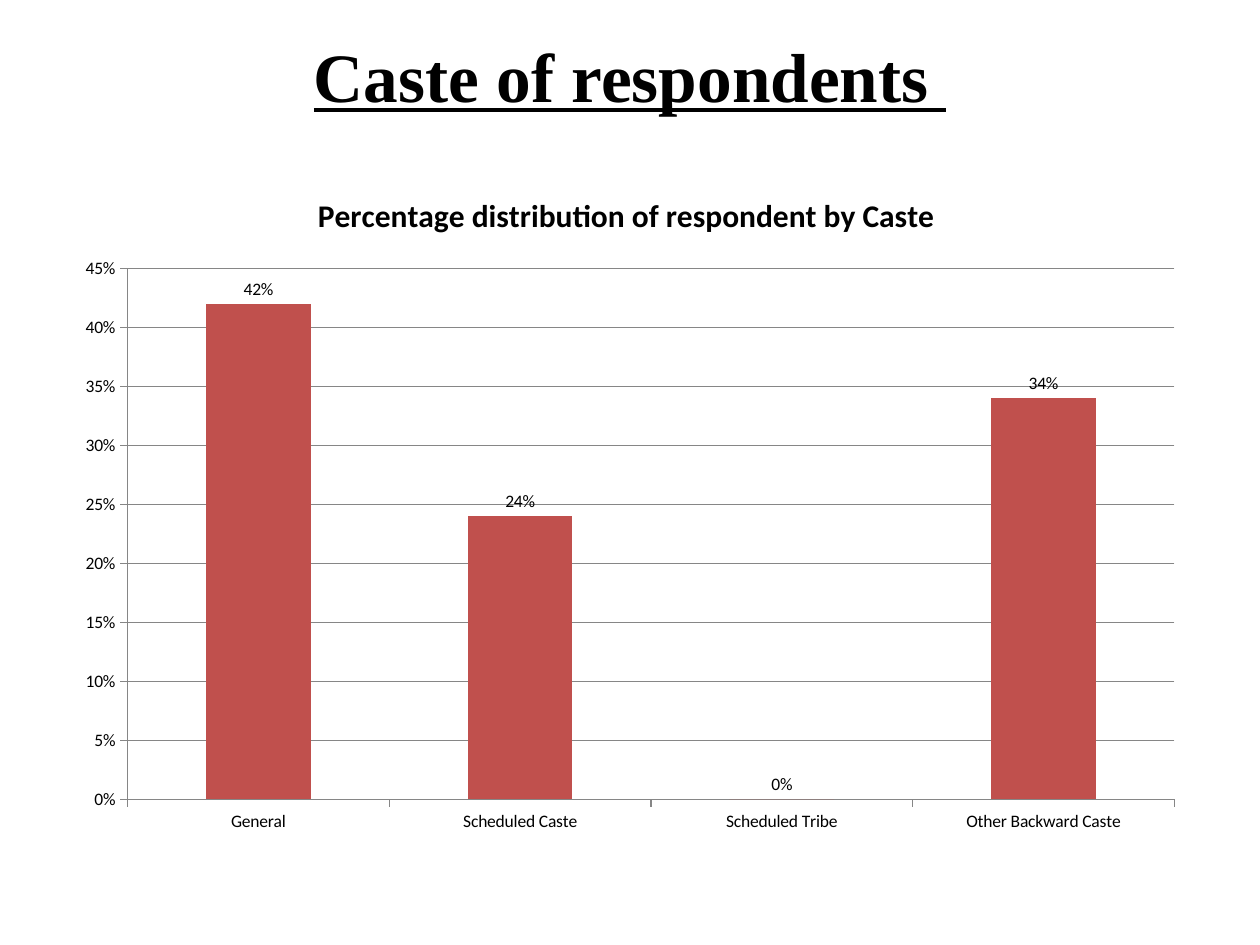
from pptx import Presentation
from pptx.chart.data import CategoryChartData
from pptx.dml.color import RGBColor
from pptx.enum.chart import XL_CHART_TYPE, XL_LABEL_POSITION, XL_TICK_MARK
from pptx.enum.text import MSO_ANCHOR, MSO_AUTO_SIZE, PP_ALIGN
from pptx.util import Pt

COLUMNS = XL_CHART_TYPE.COLUMN_CLUSTERED
OUTSIDE_END = XL_LABEL_POSITION.OUTSIDE_END
TICK_OUTSIDE = XL_TICK_MARK.OUTSIDE
MIDDLE = MSO_ANCHOR.MIDDLE
NO_AUTOFIT = MSO_AUTO_SIZE.NONE
CENTER = PP_ALIGN.CENTER

HEADING = "Caste of respondents \v"
CHART_TITLE = "Percentage distribution of respondent by Caste "
SERIES_NAME = "Series 1"
SHARES = {
    "General": 0.42,
    "Scheduled Caste": 0.24,
    "Scheduled Tribe": 0,
    "Other Backward Caste": 0.34,
}
PERCENT = "0%"
BLACK, GREY, RED = "000000", "868686", "C0504D"

PX = 914400 // 126
PAGE_SIZE = (1260, 945)
HEADING_BOX = (63, 38, 1134, 157)
CHART_BOX = (63, 168, 1134, 677)


def px(*lengths):
    return [length * PX for length in lengths]


def color(code):
    return RGBColor.from_string(code)


def style_font(font, name, size, bold=False):
    font.name = name
    font.size = Pt(size)
    font.bold = bold
    font.color.rgb = color(BLACK)


def style_line(line):
    line.color.rgb = color(GREY)
    line.width = Pt(0.75)


def add_heading(page):
    heading = page.shapes.title
    heading.left, heading.top, heading.width, heading.height = px(*HEADING_BOX)
    frame = heading.text_frame
    frame.text = HEADING
    frame.word_wrap = True
    frame.auto_size = NO_AUTOFIT
    frame.vertical_anchor = MIDDLE
    para = frame.paragraphs[0]
    para.alignment = CENTER
    style_font(para.font, "Times New Roman", 39.6, bold=True)
    para.font.underline = True


def add_share_chart(page):
    data = CategoryChartData(number_format=PERCENT)
    data.categories = list(SHARES)
    data.add_series(SERIES_NAME, list(SHARES.values()))
    chart = page.shapes.add_chart(COLUMNS, *px(*CHART_BOX), data).chart
    style_font(chart.font, "Calibri", 10)
    chart.has_legend = False

    title_frame = chart.chart_title.text_frame
    title_frame.text = CHART_TITLE
    style_font(title_frame.paragraphs[0].font, "Calibri", 18, bold=True)

    for axis in (chart.category_axis, chart.value_axis):
        axis.major_tick_mark = TICK_OUTSIDE
        style_line(axis.format.line)
    value_axis = chart.value_axis
    value_axis.minimum_scale, value_axis.maximum_scale = 0, 0.45
    value_axis.major_unit = 0.05
    value_axis.tick_labels.number_format = PERCENT
    value_axis.tick_labels.number_format_is_linked = False
    value_axis.has_major_gridlines = True
    style_line(value_axis.major_gridlines.format.line)

    plot = chart.plots[0]
    plot.vary_by_categories = False
    plot.gap_width = 150
    fill = plot.series[0].format.fill
    fill.solid()
    fill.fore_color.rgb = color(RED)
    plot.has_data_labels = True
    labels = plot.data_labels
    labels.show_value = True
    labels.position = OUTSIDE_END
    labels.number_format = PERCENT
    labels.number_format_is_linked = False


def main():
    deck = Presentation()
    deck.slide_width, deck.slide_height = px(*PAGE_SIZE)
    page = deck.slides.add_slide(deck.slide_layouts.get_by_name("Title Only"))
    add_heading(page)
    add_share_chart(page)
    deck.save("out.pptx")


if __name__ == "__main__":
    main()
